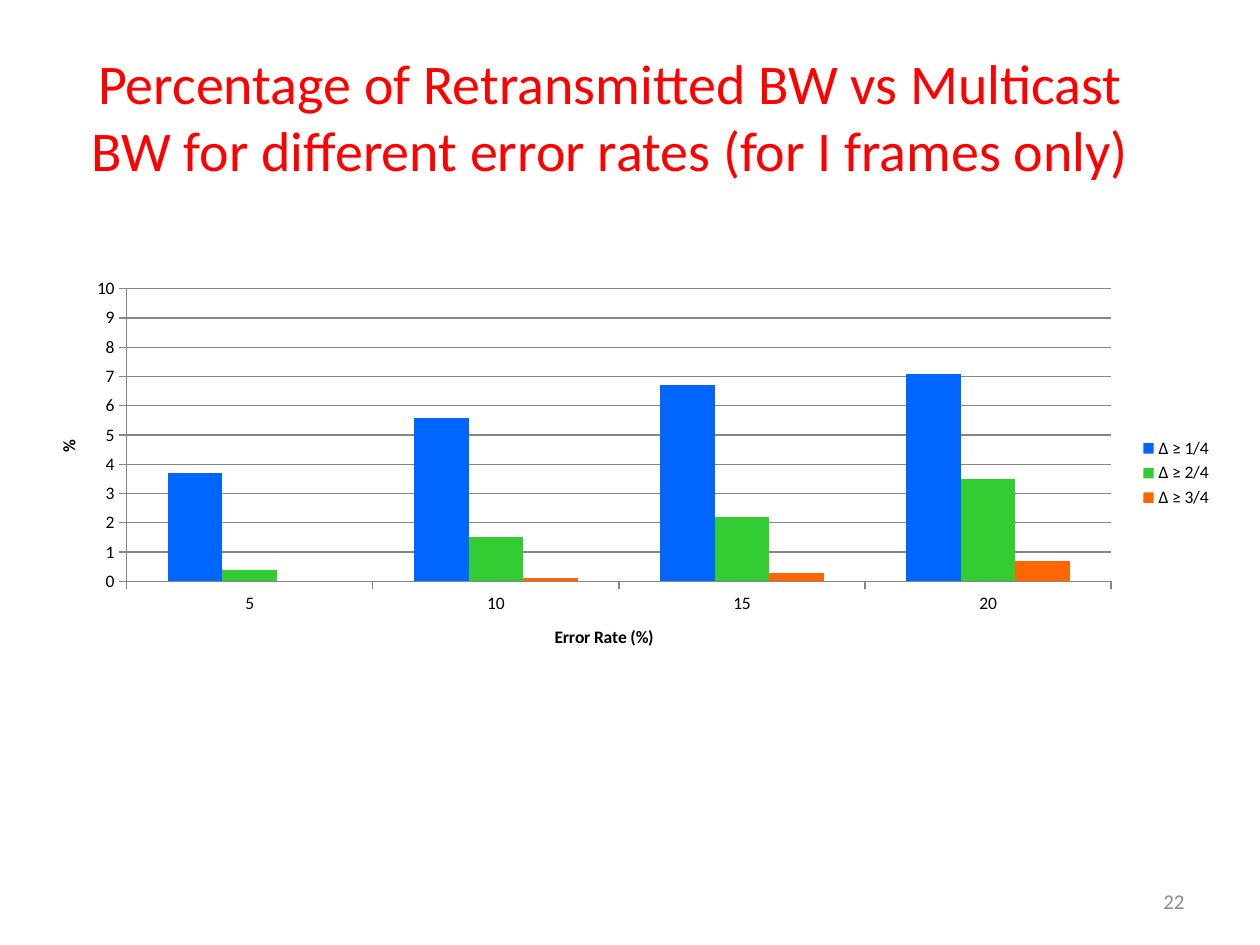
"""Build the slide on retransmitted bandwidth against error rate."""
from dataclasses import dataclass

from lxml import etree
from pptx import Presentation
from pptx.chart.axis import CategoryAxis, ValueAxis
from pptx.chart.chart import Chart
from pptx.chart.data import CategoryChartData
from pptx.dml.color import RGBColor
from pptx.enum.chart import XL_CHART_TYPE, XL_LEGEND_POSITION, XL_TICK_MARK
from pptx.enum.text import MSO_ANCHOR, PP_ALIGN
from pptx.oxml.ns import qn
from pptx.text.text import Font, TextFrame
from pptx.util import Inches, Pt

CLUSTERED = XL_CHART_TYPE.COLUMN_CLUSTERED
LEGEND_RIGHT = XL_LEGEND_POSITION.RIGHT
TICK_OUTSIDE = XL_TICK_MARK.OUTSIDE
MIDDLE = MSO_ANCHOR.MIDDLE
CENTER, RIGHT = PP_ALIGN.CENTER, PP_ALIGN.RIGHT
SLIDE_WIDTH, SLIDE_HEIGHT = Inches(10), Inches(7.5)


@dataclass(frozen=True)
class Theme:
    font: str = "Calibri"
    title_color: str = "FF0000"
    number_color: str = "8C8C8C"
    chart_color: str = "000000"
    line_color: str = "868686"
    title_size: int = 32
    number_size: int = 12
    chart_size: int = 10


@dataclass(frozen=True)
class Box:
    left: float
    top: float
    width: float
    height: float

    def lengths(self) -> tuple[int, int, int, int]:
        return (
            Inches(self.left), Inches(self.top),
            Inches(self.width), Inches(self.height),
        )


@dataclass(frozen=True)
class Series:
    name: str
    values: tuple[float, ...]
    color: str


THEME = Theme()
TITLE_BOX = Box(0.51, 0.29, 8.67, 1.25)
NUMBER_BOX = Box(7.17, 6.95, 2.33, 0.4)
CHART_BOX = Box(0.43, 2.1, 9.29, 3.31)
PLOT_SHARES = {"x": 0.062, "y": 0.058, "w": 0.841, "h": 0.702}
ERROR_RATES = ("5", "10", "15", "20")
SERIES = (
    Series("∆ ≥ 1/4", (3.7, 5.6, 6.7, 7.1), "0066FF"),
    Series("∆ ≥ 2/4", (0.4, 1.5, 2.2, 3.5), "33CC33"),
    Series("∆ ≥ 3/4", (0, 0.1, 0.3, 0.7), "FF6600"),
)


def style_font(font: Font, size: int, color: str, bold: bool = False) -> None:
    font.name = THEME.font
    font.size = Pt(size)
    font.bold = bold
    font.color.rgb = RGBColor.from_string(color)


def write_text(frame: TextFrame, text: str, size: int, color: str,
               alignment: PP_ALIGN) -> None:
    frame.word_wrap = True
    frame.vertical_anchor = MIDDLE
    paragraph = frame.paragraphs[0]
    paragraph.alignment = alignment
    run = paragraph.add_run()
    run.text = text
    style_font(run.font, size, color)


def style_axis(axis: CategoryAxis | ValueAxis, title: str) -> None:
    axis.major_tick_mark = TICK_OUTSIDE
    axis.format.line.color.rgb = RGBColor.from_string(THEME.line_color)
    style_font(axis.tick_labels.font, THEME.chart_size, THEME.chart_color)
    run = axis.axis_title.text_frame.paragraphs[0].add_run()
    run.text = title
    style_font(run.font, THEME.chart_size, THEME.chart_color, bold=True)


def place_plot(chart: Chart) -> None:
    plot_area = chart.element.find(".//" + qn("c:plotArea"))
    for layout in plot_area.findall(qn("c:layout")):
        plot_area.remove(layout)
    layout = etree.Element(qn("c:layout"))
    plot_area.insert(0, layout)
    manual = etree.SubElement(layout, qn("c:manualLayout"))
    settings = {"layoutTarget": "inner", "xMode": "edge", "yMode": "edge"}
    for name, value in (settings | PLOT_SHARES).items():
        etree.SubElement(manual, qn("c:" + name)).set("val", str(value))


def add_error_chart(slide) -> None:
    data = CategoryChartData()
    data.categories = ERROR_RATES
    for series in SERIES:
        data.add_series(series.name, series.values)
    chart = slide.shapes.add_chart(CLUSTERED, *CHART_BOX.lengths(), data).chart
    style_font(chart.font, THEME.chart_size, THEME.chart_color)
    chart.has_title = False
    chart.has_legend = True
    chart.legend.position = LEGEND_RIGHT
    chart.legend.include_in_layout = False
    plot = chart.plots[0]
    plot.gap_width = 150
    plot.overlap = 0
    plot.vary_by_categories = False
    for series, bars in zip(SERIES, plot.series):
        bars.format.fill.solid()
        bars.format.fill.fore_color.rgb = RGBColor.from_string(series.color)
    style_axis(chart.category_axis, "Error Rate (%)")
    axis = chart.value_axis
    style_axis(axis, "%")
    axis.minimum_scale, axis.maximum_scale, axis.major_unit = 0, 10, 1
    axis.has_major_gridlines = True
    grid_line = axis.major_gridlines.format.line
    grid_line.color.rgb = RGBColor.from_string(THEME.line_color)
    place_plot(chart)


def main() -> None:
    presentation = Presentation()
    presentation.slide_width = SLIDE_WIDTH
    presentation.slide_height = SLIDE_HEIGHT
    slide = presentation.slides.add_slide(presentation.slide_layouts[5])
    title = slide.shapes.title
    title.left, title.top, title.width, title.height = TITLE_BOX.lengths()
    write_text(
        title.text_frame,
        "Percentage of Retransmitted BW vs Multicast BW "
        "for different error rates (for I frames only)",
        THEME.title_size, THEME.title_color, CENTER,
    )
    number = slide.shapes.add_textbox(*NUMBER_BOX.lengths())
    write_text(number.text_frame, "22", THEME.number_size,
               THEME.number_color, RIGHT)
    add_error_chart(slide)
    presentation.save("out.pptx")


if __name__ == "__main__":
    main()
